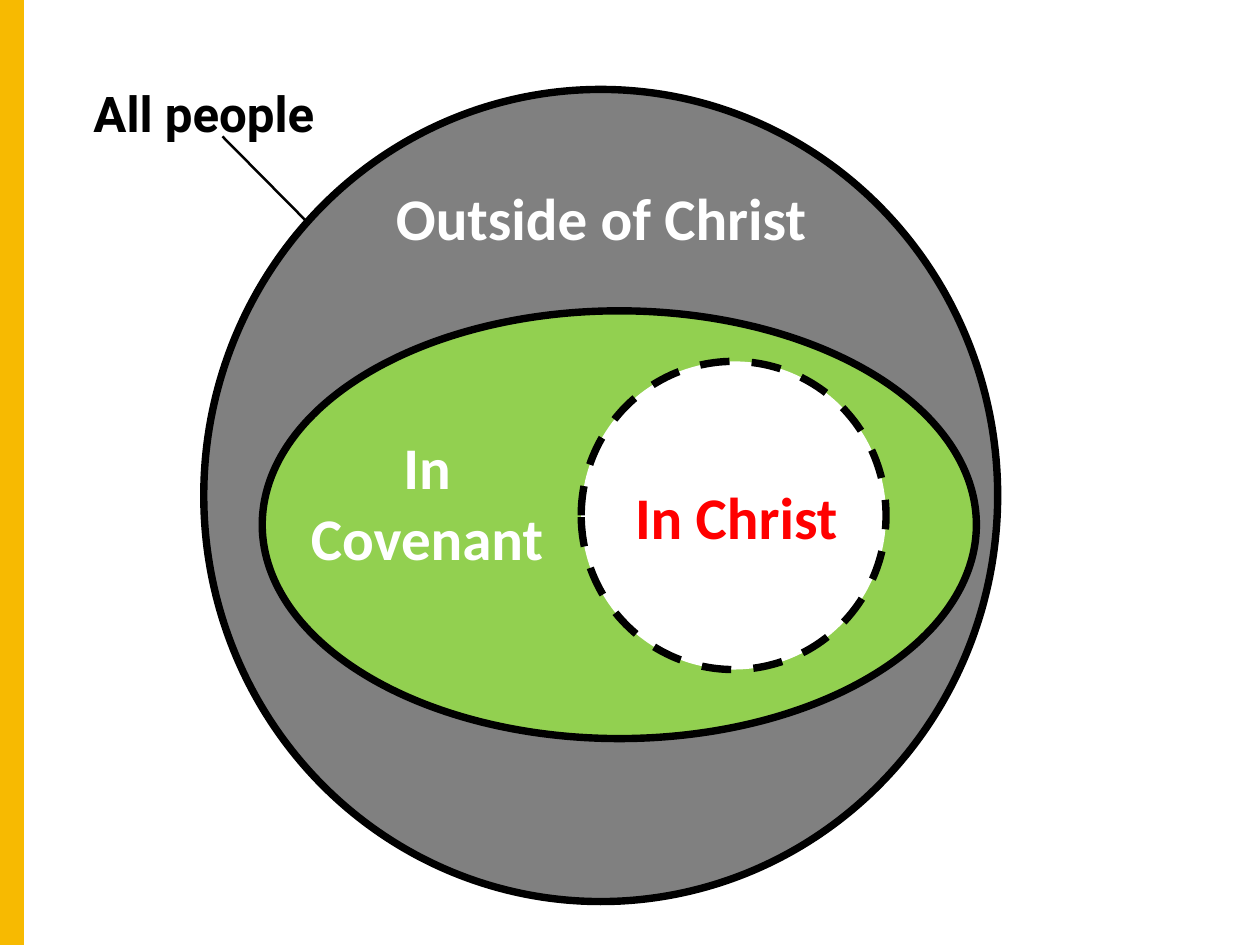
from lxml.etree import SubElement
from pptx import Presentation
from pptx.dml.color import RGBColor
from pptx.enum.dml import MSO_LINE
from pptx.enum.shapes import MSO_CONNECTOR as Connector, MSO_SHAPE as Shape
from pptx.enum.text import MSO_ANCHOR as Anchor, PP_ALIGN as Align
from pptx.oxml.ns import qn
from pptx.util import Emu, Pt

EMU_PER_PX = 9144
WIDTH, HEIGHT = 1422, 1067
COLORS = {
    "black": "000000",
    "white": "FFFFFF",
    "gray": "808080",
    "green": "92D050",
    "red": "FF0000",
    "gold": "F7BA01",
}


def px(*lengths):
    return [Emu(length * EMU_PER_PX) for length in lengths]


def color(name):
    return RGBColor.from_string(COLORS[name])


def write(frame, text, font="Calibri", size=48, ink="white", bold=True):
    para = frame.paragraphs[0]
    para.alignment = Align.CENTER
    span = para.add_run()
    span.text = text
    span.font.name = font
    span.font.size = Pt(size)
    span.font.bold = bold
    span.font.color.rgb = color(ink)


class Diagram:
    """Draws styled ellipses, lines and labels on one page."""

    def __init__(self, page, outline="black", border=6, inset=6):
        self.page = page
        self.outline = outline
        self.border = border
        self.inset = inset

    def ellipse(self, left, top, width, height, fill, dash=None):
        oval = self.page.shapes.add_shape(Shape.OVAL, *px(left, top, width, height))
        oval.shadow.inherit = False
        oval.fill.solid()
        oval.fill.fore_color.rgb = color(fill)
        oval.line.color.rgb = color(self.outline)
        oval.line.width = Pt(self.border)
        if dash:
            oval.line.dash_style = dash

    def line(self, start_x, start_y, end_x, end_y, ink, weight):
        line = self.page.shapes.add_connector(
            Connector.STRAIGHT, *px(start_x, start_y, end_x, end_y))
        line.line.color.rgb = color(ink)
        line.line.width = Pt(weight)
        SubElement(line._element.spPr, qn("a:effectLst"))

    def label(self, left, top, width, height, text, **style):
        box = self.page.shapes.add_textbox(*px(left, top, width, height))
        frame = box.text_frame
        frame.word_wrap = True
        frame.vertical_anchor = Anchor.MIDDLE
        (inset,) = px(self.inset)
        frame.margin_left = frame.margin_right = inset
        frame.margin_top = frame.margin_bottom = inset
        write(frame, text, **style)


def main():
    deck = Presentation()
    deck.slide_width, deck.slide_height = px(WIDTH, HEIGHT)
    diagram = Diagram(deck.slides.add_slide(deck.slide_layouts[6]))

    diagram.ellipse(230, 101, 896, 917, "gray")
    diagram.label(84, 88, 292, 79, "All people", font="Roboto", size=40, ink="black")
    diagram.line(251, 154, 347, 251, "black", 2)
    diagram.line(13, HEIGHT, 13, 0, "gold", 20)
    diagram.label(428, 158, 501, 173, "Outside of Christ")

    diagram.ellipse(296, 351, 806, 483, "green")
    diagram.label(320, 480, 324, 173, "In Covenant")

    diagram.ellipse(656, 408, 344, 348, "white", dash=MSO_LINE.DASH)
    diagram.label(669, 536, 324, 92, "In Christ", ink="red")

    deck.save("out.pptx")


if __name__ == "__main__":
    main()
